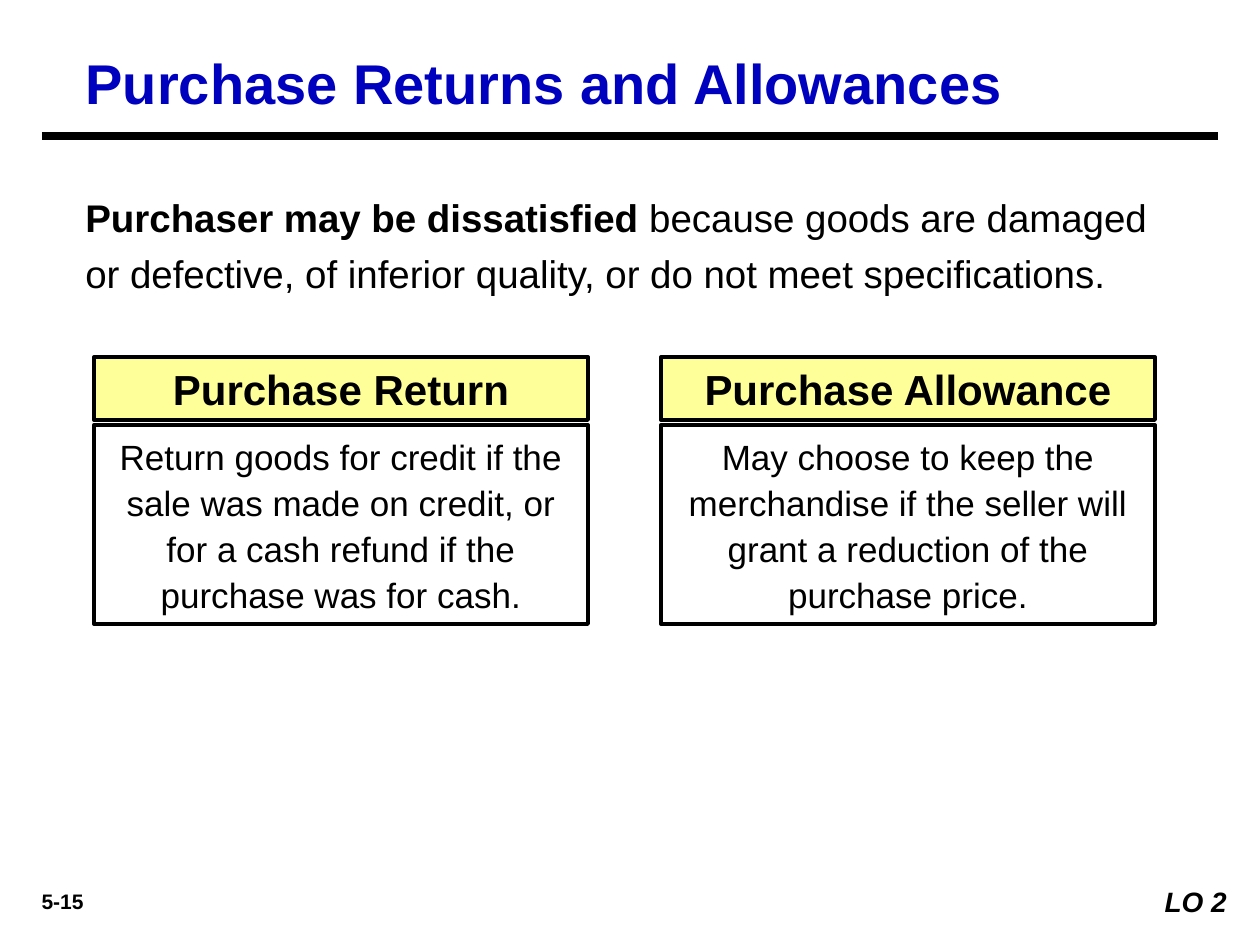
from dataclasses import dataclass

from lxml import etree
from pptx import Presentation
from pptx.dml.color import RGBColor
from pptx.enum.shapes import MSO_CONNECTOR, MSO_SHAPE
from pptx.enum.text import MSO_ANCHOR, MSO_AUTO_SIZE, PP_ALIGN
from pptx.oxml.ns import qn
from pptx.util import Emu, Pt

LEFT, CENTER, RIGHT = PP_ALIGN.LEFT, PP_ALIGN.CENTER, PP_ALIGN.RIGHT
TOP = MSO_ANCHOR.TOP
NO_AUTOFIT = MSO_AUTO_SIZE.NONE
RECTANGLE = MSO_SHAPE.RECTANGLE
STRAIGHT = MSO_CONNECTOR.STRAIGHT

TITLE = "Purchase Returns and Allowances"
INTRO = (
    "Purchaser may be dissatisfied",
    " because goods are damaged or defective, of inferior quality, "
    "or do not meet specifications.",
)
CARDS = [
    ("Purchase Return",
     "Return goods for credit if the sale was made on credit, "
     "or for a cash refund if the purchase was for cash."),
    ("Purchase Allowance",
     "May choose to keep the merchandise if the seller will grant "
     "a reduction of the purchase price."),
]
PAGE_NUMBER = "5-15"
OBJECTIVE = "LO 2"


@dataclass(frozen=True)
class Theme:
    font: str = "Arial"
    ink: RGBColor = RGBColor(0x00, 0x00, 0x00)
    title: RGBColor = RGBColor(0x00, 0x00, 0xBF)
    header: RGBColor = RGBColor(0xFF, 0xFF, 0x99)
    paper: RGBColor = RGBColor(0xFF, 0xFF, 0xFF)
    title_size: int = 32
    header_size: int = 24
    intro_size: int = 22
    card_size: int = 20
    objective_size: int = 16
    number_size: int = 12
    border: float = 2.25
    rule: float = 4.5


THEME = Theme()
EMU_PER_PX = 914400 / 126

PAGE_WIDTH, PAGE_HEIGHT = 1260, 945
RULE_INSET, RULE_Y = 42, 136
CARD_LEFT, CARD_WIDTH, CARD_GAP = 94, 494, 73
HEADER_TOP, HEADER_HEIGHT = 357, 63
CARD_TOP, CARD_HEIGHT = 425, 199


def px(value):
    return Emu(round(value * EMU_PER_PX))


def write(shape, parts, size, align=LEFT, color=THEME.ink, bold=False,
          italic=False, line_spacing=1.0):
    """Fill the shape with one paragraph; only the first part takes bold."""
    frame = shape.text_frame
    frame.word_wrap = True
    frame.auto_size = NO_AUTOFIT
    frame.vertical_anchor = TOP
    para = frame.paragraphs[0]
    para.alignment = align
    para.line_spacing = line_spacing
    for index, text in enumerate(parts):
        span = para.add_run()
        span.text = text
        span.font.name = THEME.font
        span.font.size = Pt(size)
        span.font.bold = bold and index == 0
        span.font.italic = italic
        span.font.color.rgb = color


def add_text_box(page, left, top, width, height):
    return page.shapes.add_textbox(px(left), px(top), px(width), px(height))


def add_rectangle(page, left, top, width, height, fill=None, border=True):
    box = page.shapes.add_shape(RECTANGLE, px(left), px(top), px(width), px(height))
    box.shadow.inherit = False
    if fill is None:
        box.fill.background()
    else:
        box.fill.solid()
        box.fill.fore_color.rgb = fill
    if border:
        box.line.color.rgb = THEME.ink
        box.line.width = Pt(THEME.border)
    else:
        box.line.fill.background()
    return box


def add_title(page):
    title = page.shapes.title
    title.left, title.top = px(73), px(42)
    title.width, title.height = px(1050), px(77)
    write(title, [TITLE], THEME.title_size, color=THEME.title, bold=True)


def add_title_rule(page):
    rule = page.shapes.add_connector(
        STRAIGHT, px(RULE_INSET), px(RULE_Y), px(PAGE_WIDTH - RULE_INSET), px(RULE_Y))
    rule.line.color.rgb = THEME.ink
    rule.line.width = Pt(THEME.rule)
    etree.SubElement(rule._element.spPr, qn("a:effectLst"))


def add_card(page, left, heading, body):
    card = add_rectangle(page, left, CARD_TOP, CARD_WIDTH, CARD_HEIGHT)
    write(card, [body], THEME.card_size, CENTER, line_spacing=1.1)
    header = add_rectangle(page, left, HEADER_TOP, CARD_WIDTH, HEADER_HEIGHT, THEME.header)
    write(header, [heading], THEME.header_size, CENTER, bold=True)


def main():
    deck = Presentation()
    deck.slide_width, deck.slide_height = px(PAGE_WIDTH), px(PAGE_HEIGHT)
    page = deck.slides.add_slide(deck.slide_layouts[5])

    add_title(page)
    add_title_rule(page)
    intro = add_text_box(page, 73, 179, 1124, 125)
    write(intro, INTRO, THEME.intro_size, bold=True, line_spacing=1.2)
    for index, (heading, body) in enumerate(CARDS):
        add_card(page, CARD_LEFT + index * (CARD_WIDTH + CARD_GAP), heading, body)

    number = add_text_box(page, 10, 882, 105, 38)
    write(number, [PAGE_NUMBER], THEME.number_size, CENTER, bold=True)
    objective = add_rectangle(page, 1134, 878, 105, 47, THEME.paper, border=False)
    write(objective, [OBJECTIVE], THEME.objective_size, RIGHT, bold=True, italic=True)

    deck.save("out.pptx")


if __name__ == "__main__":
    main()
